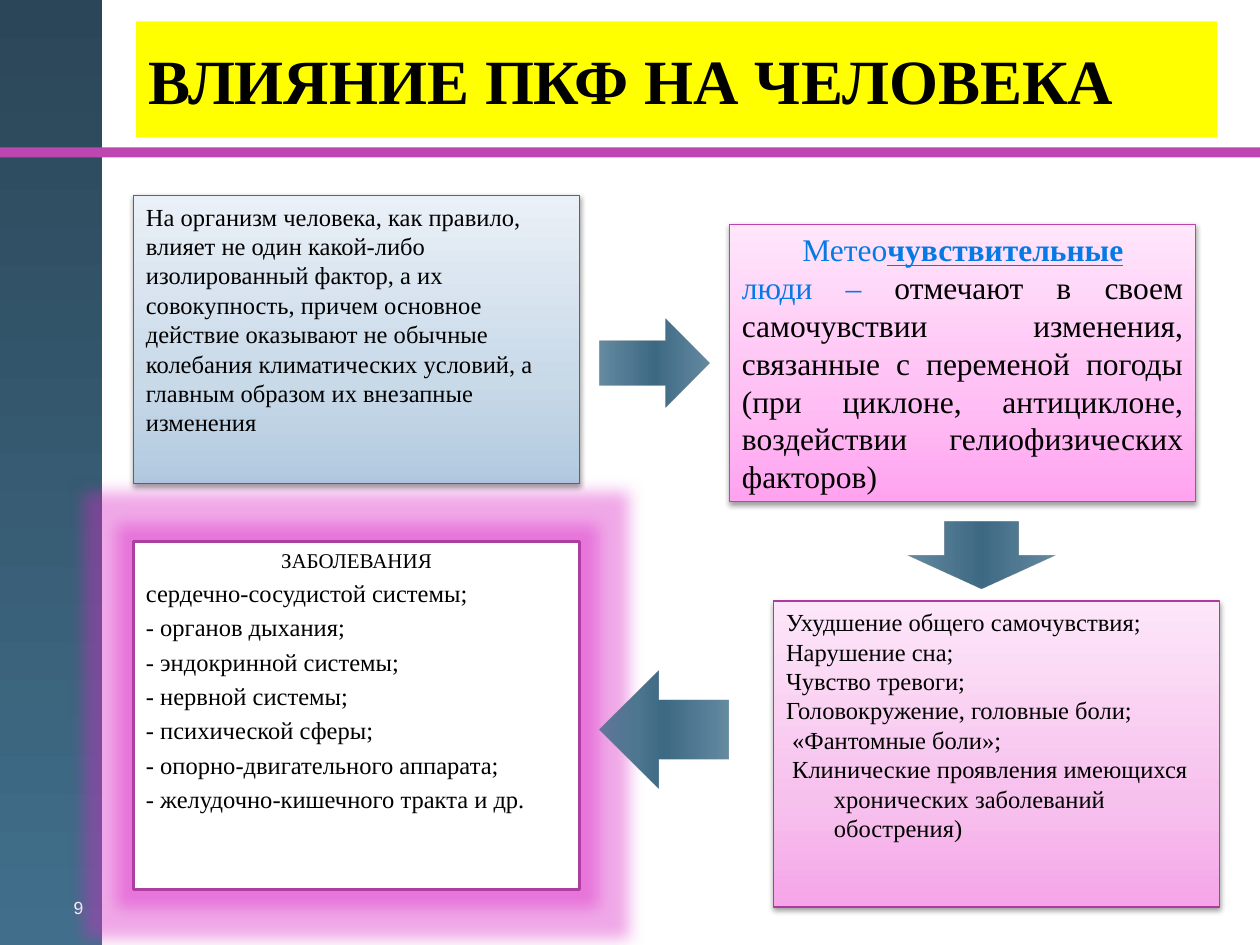
from lxml.etree import SubElement
from pptx import Presentation
from pptx.dml.color import RGBColor as RGB
from pptx.enum.shapes import MSO_SHAPE as SHAPE
from pptx.enum.text import MSO_ANCHOR as ANCHOR, PP_ALIGN as ALIGN
from pptx.oxml.ns import qn
from pptx.util import Inches, Pt

STEEL, PINK, ROSE = "B1C9DF C8D9E8 EAF0F7", "FFA3F0 FFBEF4 FFE6FB", "F5A5E8 F7C1ED FDE6F9"
THEME = {
    "serif": "Times New Roman", "sans": "Arial",
    "ink": "000000", "paper": "FFFFFF", "accent": "057AE5",
    "title": "FFFF00", "band": "BE46B0", "glow": "DA28C6",
    "sidebar": [(0, "2B4658", 100), (100, "416F8B", 100)],
    "arrow": [(0, "416F8B", 80), (50, "3E6A84", 100), (100, "416F8B", 80)],
    "size": {"title": 36, "large": 18, "body": 14, "small": 12, "number": 10},
}
SIZE = THEME["size"]

deck = Presentation()
deck.slide_width, deck.slide_height = Inches(10), Inches(7.5)
slide = deck.slides.add_slide(deck.slide_layouts[6])


def block(kind, area, fill, angle=0, line=None, width=0.75, effect=None):
    """Add a shape; area is left, top, width, height in percent of the slide."""
    sides = (deck.slide_width, deck.slide_height) * 2
    shape = slide.shapes.add_shape(kind, *(round(s * a / 100) for s, a in zip(sides, area)))
    shape.shadow.inherit = False
    props = shape._element.spPr
    if isinstance(fill, str):
        shape.fill.solid()
        shape.fill.fore_color.rgb = RGB.from_string(fill)
    else:
        shape.fill.gradient()
        shape.fill.gradient_angle = 0
        gradient = props.find(qn("a:gradFill"))
        stops = gradient.find(qn("a:gsLst"))
        for old in list(stops):
            stops.remove(old)
        for position, color, alpha in fill:
            stop = SubElement(stops, qn("a:gs"), pos=str(position * 1000))
            tint = SubElement(stop, qn("a:srgbClr"), val=color)
            if alpha < 100:
                SubElement(tint, qn("a:alpha"), val=str(alpha * 1000))
        gradient.find(qn("a:lin")).set("ang", str(angle * 60000))
    if line:
        shape.line.color.rgb = RGB.from_string(line)
        shape.line.width = Pt(width)
    else:
        shape.line.fill.background()
    if effect:
        tag, color, alpha, settings = effect
        node = SubElement(props.find(qn("a:effectLst")), qn(tag), **settings)
        tint = SubElement(node, qn("a:srgbClr"), val=color)
        SubElement(tint, qn("a:alpha"), val=str(alpha * 1000))
    return shape


def write(shape, paragraphs, size=SIZE["body"], font=THEME["serif"], color=THEME["ink"],
          bold=False, align=ALIGN.LEFT, anchor=ANCHOR.TOP, margin=0, indent=0, before=0):
    """Each paragraph is a string or a list of (text, format) runs."""
    frame = shape.text_frame
    frame.word_wrap, frame.vertical_anchor = True, anchor
    for number, content in enumerate(paragraphs):
        line = frame.add_paragraph() if number else frame.paragraphs[0]
        line.alignment = align
        line._p.get_or_add_pPr().set("marL", str(Inches(margin)))
        line._p.get_or_add_pPr().set("indent", str(Inches(indent)))
        if number and before:
            line.space_before = Pt(before)
        for words, look in [(content, {})] if isinstance(content, str) else content:
            run = line.add_run()
            run.text = words
            run.font.name, run.font.size = font, Pt(look.get("size", size))
            run.font.bold = look.get("bold", bold)
            run.font.underline = look.get("underline", False)
            run.font.color.rgb = RGB.from_string(look.get("color", color))
    return frame


# Sidebar, band and slide number
block(SHAPE.RECTANGLE, (0, 0, 8.1, 100), THEME["sidebar"], angle=90)
block(SHAPE.RECTANGLE, (0, 15.6, 100, 1.07), THEME["band"])
page = slide.shapes.add_textbox(Inches(0.09), Inches(7.07), Inches(0.67), Inches(0.35))
write(page, ["9"], size=SIZE["number"], font=THEME["sans"], color=THEME["paper"],
      align=ALIGN.RIGHT)

# Title
title = block(SHAPE.RECTANGLE, (10.8, 2.27, 85.8, 12.27), THEME["title"])
write(title, ["ВЛИЯНИЕ ПКФ НА ЧЕЛОВЕКА"], size=SIZE["title"], bold=True, anchor=ANCHOR.MIDDLE)

# Three shaded panels: influence, sensitive people, symptoms
shadow = ("a:outerShdw", THEME["ink"], 38,
          {"blurRad": str(Pt(3.1)), "dist": str(Pt(1.6)), "dir": "5400000", "rotWithShape": "0"})
panels = []
for area, shades, edge in [
    ((10.6, 20.67, 35.4, 30.53), STEEL, "3E6D8A"),
    ((57.9, 23.73, 37, 29.33), PINK, "BD42AE"),
    ((61.4, 63.6, 35.4, 32.4), ROSE, "AB3B9E"),
]:
    stops = [(p, c, 100) for p, c in zip((0, 35, 100), shades.split())]
    panels.append(block(SHAPE.RECTANGLE, area, stops, angle=270, line=edge, effect=shadow))
influence, sensitive, symptoms = panels

write(influence, [
    "На организм человека, как правило, влияет не один какой-либо изолированный фактор, "
    "а их совокупность, причем основное действие оказывают не обычные колебания "
    "климатических условий, а главным образом их внезапные изменения"])
accent = {"color": THEME["accent"]}
write(sensitive, [[
    ("Метео", accent),
    ("чувствительные", {**accent, "bold": True, "underline": True}),
    (" люди –", accent),
    (" отмечают в своем самочувствии изменения, связанные с переменой погоды "
     "(при циклоне, антициклоне, воздействии гелиофизических факторов)", {}),
]], size=SIZE["large"], align=ALIGN.JUSTIFY, indent=0.48)
write(symptoms, [
    "Ухудшение общего самочувствия;",
    "Нарушение сна;",
    "Чувство тревоги;",
    "Головокружение, головные боли;",
    " «Фантомные боли»;",
    " Клинические проявления имеющихся хронических заболеваний обострения)",
], margin=0.38, indent=-0.38)

# Glowing panel of diseases
glow = ("a:glow", THEME["glow"], 40, {"rad": str(Inches(0.25))})
diseases = block(SHAPE.RECTANGLE, (10.6, 57.33, 35.4, 36.8), THEME["paper"],
                 line="AC3F9F", width=2, effect=glow)
disease_list = write(diseases, [
    [("ЗАБОЛЕВАНИЯ", {"size": SIZE["small"]})],
    "сердечно-сосудистой системы;",
    "- органов дыхания;",
    "- эндокринной системы;",
    "- нервной системы;",
    "- психической сферы;",
    "- опорно-двигательного аппарата;",
    "- желудочно-кишечного тракта и др.",
], margin=0.38, indent=-0.38, before=2.8)
disease_list.paragraphs[0].alignment = ALIGN.CENTER

# Arrows leading from panel to panel
for kind, area in [
    (SHAPE.RIGHT_ARROW, (47.6, 33.73, 8.7, 9.33)),
    (SHAPE.DOWN_ARROW, (72, 55.2, 11.8, 7.07)),
    (SHAPE.LEFT_ARROW, (47.6, 70.93, 10.2, 12.53)),
]:
    block(kind, area, THEME["arrow"])

deck.save("out.pptx")
